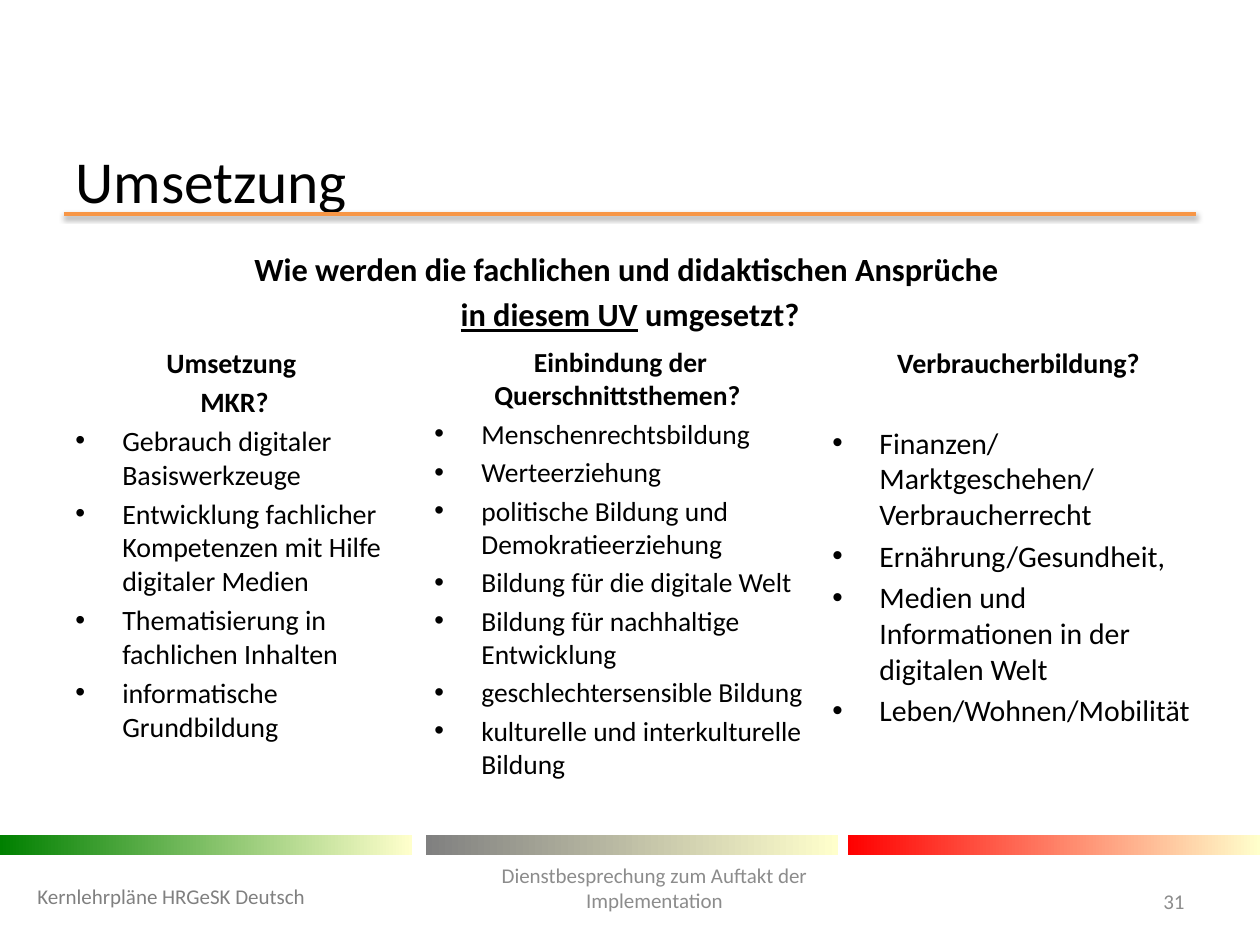
from lxml import etree
from pptx import Presentation
from pptx.dml.color import RGBColor
from pptx.enum.shapes import MSO_CONNECTOR, MSO_SHAPE
from pptx.enum.text import MSO_ANCHOR, MSO_AUTO_SIZE, PP_ALIGN
from pptx.oxml import parse_xml
from pptx.oxml.ns import nsdecls, qn
from pptx.util import Emu, Pt

STRAIGHT = MSO_CONNECTOR.STRAIGHT
RECTANGLE = MSO_SHAPE.RECTANGLE
TOP, MIDDLE = MSO_ANCHOR.TOP, MSO_ANCHOR.MIDDLE
LEFT, CENTER, RIGHT = PP_ALIGN.LEFT, PP_ALIGN.CENTER, PP_ALIGN.RIGHT
NO_AUTOFIT = MSO_AUTO_SIZE.NONE

FONT = "Calibri"
TITLE_ONLY = 5
BULLET_INDENT = 47
PANEL_TOP, PANEL_HEIGHT = 339, 460
BAR_TOP, BAR_WIDTH, BAR_HEIGHT = 835, 412, 20
BARS = [(0, "008000"), (426, "808080"), (848, "FF0000")]

PANELS = [
    (422, 397, 15.7, 15.7, 3.1, ["Einbindung der Querschnittsthemen? "], [
        "Menschenrechtsbildung",
        "Werteerziehung",
        "politische Bildung und Demokratieerziehung",
        "Bildung für die digitale Welt",
        "Bildung für nachhaltige Entwicklung",
        "geschlechtersensible Bildung",
        "kulturelle und interkulturelle Bildung",
    ]),
    (820, 397, 16, 17, 26, ["Verbraucherbildung?"], [
        "Finanzen/Marktgeschehen/Verbraucherrecht",
        "Ernährung/Gesundheit,",
        "Medien und Informationen in der digitalen Welt",
        "Leben/Wohnen/Mobilität",
    ]),
    (63, 343, 16, 16, 3.2, ["Umsetzung ", "MKR?"], [
        "Gebrauch digitaler Basiswerkzeuge",
        "Entwicklung fachlicher Kompetenzen mit Hilfe digitaler Medien",
        "Thematisierung in fachlichen Inhalten",
        "informatische Grundbildung",
    ]),
]


def px(length):
    """Turn pixels at 126 to the inch into EMU."""
    return Emu(round(length * 914400 / 126))


def color(value):
    """Turn a hex string into a colour."""
    return RGBColor.from_string(value)


def style(para, size, shade="000000", bold=False, align=LEFT, before=0):
    """Format a paragraph and all its runs."""
    para.alignment = align
    para.space_before = Pt(before)
    for span in para.runs:
        span.font.name = FONT
        span.font.size = Pt(size)
        span.font.bold = bold
        span.font.color.rgb = color(shade)


def add_bullet(para):
    """Give a paragraph a hanging bullet."""
    properties = para._p.get_or_add_pPr()
    properties.set("marL", str(px(BULLET_INDENT)))
    properties.set("indent", str(-px(BULLET_INDENT)))
    etree.SubElement(properties, qn("a:buFont")).set("typeface", "Arial")
    etree.SubElement(properties, qn("a:buChar")).set("char", "•")


def prepare_frame(box, anchor):
    """Set wrapping and anchoring, and return the text frame."""
    frame = box.text_frame
    frame.word_wrap = True
    frame.auto_size = NO_AUTOFIT
    frame.vertical_anchor = anchor
    return frame


def add_box(page, left, top, width, height, anchor=TOP, fill=None):
    """Add a wrapping text box and return its text frame."""
    box = page.shapes.add_textbox(px(left), px(top), px(width), px(height))
    if fill:
        box.fill.solid()
        box.fill.fore_color.rgb = color(fill)
    return prepare_frame(box, anchor)


def add_rule(page, left, right, top):
    """Add the line under the title with its soft shadow."""
    rule = page.shapes.add_connector(STRAIGHT, px(left), px(top), px(right), px(top))
    rule.line.color.rgb = color("F79646")
    rule.line.width = Pt(2)
    rule._element.spPr.append(parse_xml(
        f'<a:effectLst {nsdecls("a")}>'
        '<a:outerShdw blurRad="40000" dist="20000" dir="5400000" rotWithShape="0">'
        '<a:srgbClr val="000000"><a:alpha val="38000"/></a:srgbClr>'
        '</a:outerShdw></a:effectLst>'))


def add_bar(page, left, shade):
    """Add a footer bar fading to pale yellow."""
    bar = page.shapes.add_shape(
        RECTANGLE, px(left), px(BAR_TOP), px(BAR_WIDTH), px(BAR_HEIGHT))
    bar.shadow.inherit = False
    bar.line.fill.background()
    bar.fill.gradient()
    bar.fill.gradient_angle = 0
    for stop, position, value in zip(bar.fill.gradient_stops, (0, 1), (shade, "FFFFCC")):
        stop.position = position
        stop.color.rgb = color(value)


def set_title(page, text):
    """Place and format the title placeholder."""
    title = page.shapes.title
    title.left, title.top, title.width, title.height = px(63), px(155), px(1134), px(49)
    frame = prepare_frame(title, MIDDLE)
    frame.text = text
    style(frame.paragraphs[0], 34)


def add_question(page):
    """Add the leading question in two centred lines."""
    frame = add_box(page, 63, 243, 1134, 90, fill="FFFFFF")
    first, second = frame.paragraphs[0], frame.add_paragraph()
    first.text = "Wie werden die fachlichen und didaktischen Ansprüche "
    for text, underline in (("in diesem UV", True), (" umgesetzt?", False)):
        span = second.add_run()
        span.text = text
        span.font.underline = underline
    style(first, 18.5, bold=True, align=CENTER)
    style(second, 18.5, bold=True, align=CENTER, before=3.7)


def add_panel(page, left, width, heading_size, item_size, gap, headings, items):
    """Add a column of bold headings followed by bullets."""
    frame = add_box(page, left, PANEL_TOP, width, PANEL_HEIGHT, fill="FFFFFF")
    frame.text = "\n".join(headings + items)
    for index, para in enumerate(frame.paragraphs):
        position = index - len(headings)
        if position < 0:
            before = 0.2 * heading_size if index else 0
            style(para, heading_size, bold=True, align=CENTER, before=before)
        else:
            add_bullet(para)
            style(para, item_size, before=0.2 * item_size if position else gap)


def add_footer(page, text, left, top, width, height, align, shade="8C8C8C"):
    """Add one footer text and return its text frame."""
    frame = add_box(page, left, top, width, height, MIDDLE)
    frame.text = text
    style(frame.paragraphs[0], 12, shade, align=align)
    return frame


def main():
    """Build the slide and save it."""
    deck = Presentation()
    deck.slide_width, deck.slide_height = px(1260), px(945)
    page = deck.slides.add_slide(deck.slide_layouts[TITLE_ONLY])
    add_rule(page, 64, 1196, 214)
    for left, shade in BARS:
        add_bar(page, left, shade)
    set_title(page, "Umsetzung")
    add_question(page)
    for panel in PANELS:
        add_panel(page, *panel)
    add_footer(page, "31", 1116, 876, 81, 50, RIGHT)
    add_footer(page, "Kernlehrpläne HRGeSK Deutsch", 25, 871, 417, 50, LEFT, "808080")
    event = add_footer(page, "Dienstbesprechung zum Auftakt der Implementation",
                       471, 856, 367, 89, CENTER)
    event.margin_bottom = px(32)
    deck.save("out.pptx")


if __name__ == "__main__":
    main()
